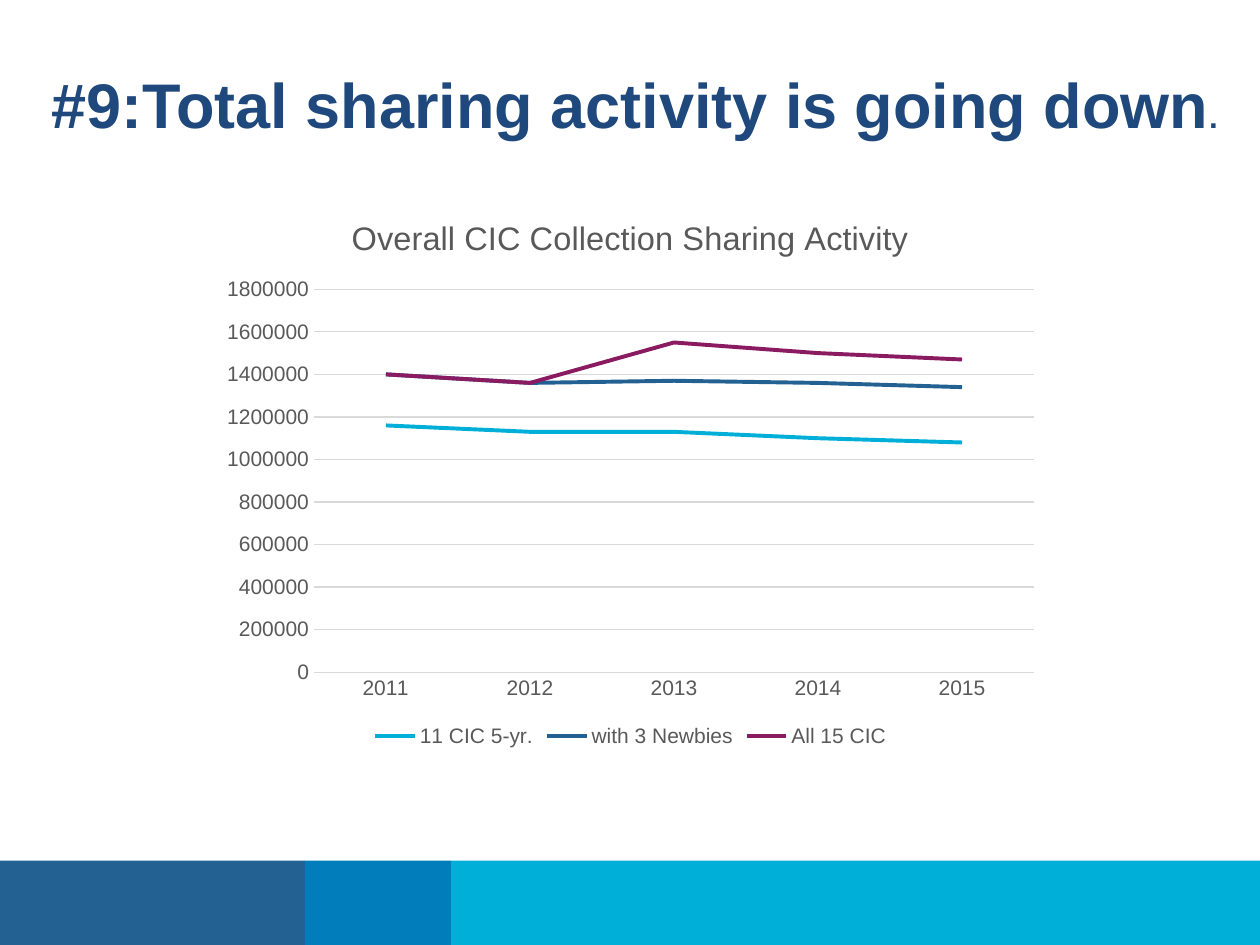
from pptx import Presentation
from pptx.chart.data import CategoryChartData
from pptx.dml.color import RGBColor
from pptx.enum.chart import XL_CHART_TYPE, XL_LEGEND_POSITION, XL_TICK_MARK
from pptx.enum.shapes import MSO_SHAPE
from pptx.enum.text import MSO_ANCHOR, MSO_AUTO_SIZE, PP_ALIGN
from pptx.util import Inches, Pt

LINE = XL_CHART_TYPE.LINE
BOTTOM = XL_LEGEND_POSITION.BOTTOM
NO_TICK = XL_TICK_MARK.NONE
RECT = MSO_SHAPE.RECTANGLE
TOP = MSO_ANCHOR.TOP
GROW = MSO_AUTO_SIZE.SHAPE_TO_FIT_TEXT
LEFT = PP_ALIGN.LEFT

TITLE = "#9:Total sharing activity is going down"
STOP = "."
CHART_TITLE = "Overall CIC Collection Sharing Activity"
YEARS = ["2011", "2012", "2013", "2014", "2015"]
SERIES = [
    ("11 CIC 5-yr.", "sky", [1160000, 1130000, 1130000, 1100000, 1080000]),
    ("with 3 Newbies", "navy", [1400000, 1360000, 1370000, 1360000, 1340000]),
    ("All 15 CIC", "plum", [1400000, 1360000, 1550000, 1500000, 1470000]),
]
BANDS = [("navy", 2.42), ("blue", 1.16), ("sky", 6.42)]
BAND_TOP, BAND_TALL = 6.83, 0.67

THEME = {
    "font": "Arial",
    "color": {"navy": "236192", "blue": "007DBA", "sky": "00AFD7",
              "plum": "8A1B61", "title": "1F497D", "label": "595959",
              "grid": "D9D9D9"},
    "size": {"title": 36, "stop": 18, "chart": 18.6, "label": 12},
}


def tint(name):
    return RGBColor.from_string(THEME["color"][name])


def style(font, size, color, bold=False):
    font.name = THEME["font"]
    font.size = Pt(THEME["size"][size])
    font.color.rgb = tint(color)
    font.bold = bold


def rule(line, color, width):
    line.color.rgb = tint(color)
    line.width = Pt(width)


def add_bands(slide):
    left = 0
    for color, wide in BANDS:
        band = slide.shapes.add_shape(
            RECT, Inches(left), Inches(BAND_TOP), Inches(wide), Inches(BAND_TALL))
        band.shadow.inherit = False
        band.fill.solid()
        band.fill.fore_color.rgb = tint(color)
        band.line.fill.background()
        left += wide


def add_title(slide):
    title = slide.shapes.title
    title.left, title.top = Inches(0.31), Inches(0.47)
    title.width, title.height = Inches(10.18), Inches(0.71)
    frame = title.text_frame
    frame.word_wrap = True
    frame.auto_size = GROW
    frame.vertical_anchor = TOP
    para = frame.paragraphs[0]
    para.alignment = LEFT
    for text, size in [(TITLE, "title"), (STOP, "stop")]:
        run = para.add_run()
        run.text = text
        style(run.font, size, "title", bold=True)


def add_graph(slide):
    data = CategoryChartData(number_format="General")
    data.categories = YEARS
    for name, _, values in SERIES:
        data.add_series(name, values)
    chart = slide.shapes.add_chart(
        LINE, Inches(1.67), Inches(1.53), Inches(6.67), Inches(4.44), data).chart
    style(chart.font, "label", "label")

    chart.has_title = True
    head = chart.chart_title.text_frame
    head.text = CHART_TITLE
    style(head.paragraphs[0].font, "chart", "label")
    chart.chart_title.include_in_layout = False

    chart.has_legend = True
    chart.legend.position = BOTTOM
    chart.legend.include_in_layout = False
    style(chart.legend.font, "label", "label")

    years, counts = chart.category_axis, chart.value_axis
    for axis in (years, counts):
        axis.major_tick_mark = axis.minor_tick_mark = NO_TICK
        style(axis.tick_labels.font, "label", "label")
    rule(years.format.line, "grid", 0.75)
    counts.format.line.fill.background()
    counts.has_major_gridlines = True
    rule(counts.major_gridlines.format.line, "grid", 0.75)
    counts.minimum_scale, counts.maximum_scale = 0, 1800000
    counts.major_unit = 200000

    plot = chart.plots[0]
    plot.vary_by_categories = False
    for series, (_, color, _) in zip(plot.series, SERIES):
        series.smooth = False
        rule(series.format.line, color, 2.25)


def main():
    deck = Presentation()
    deck.slide_width, deck.slide_height = Inches(10), Inches(7.5)
    slide = deck.slides.add_slide(deck.slide_layouts[5])
    add_bands(slide)
    add_graph(slide)
    add_title(slide)
    deck.save("out.pptx")


if __name__ == "__main__":
    main()
